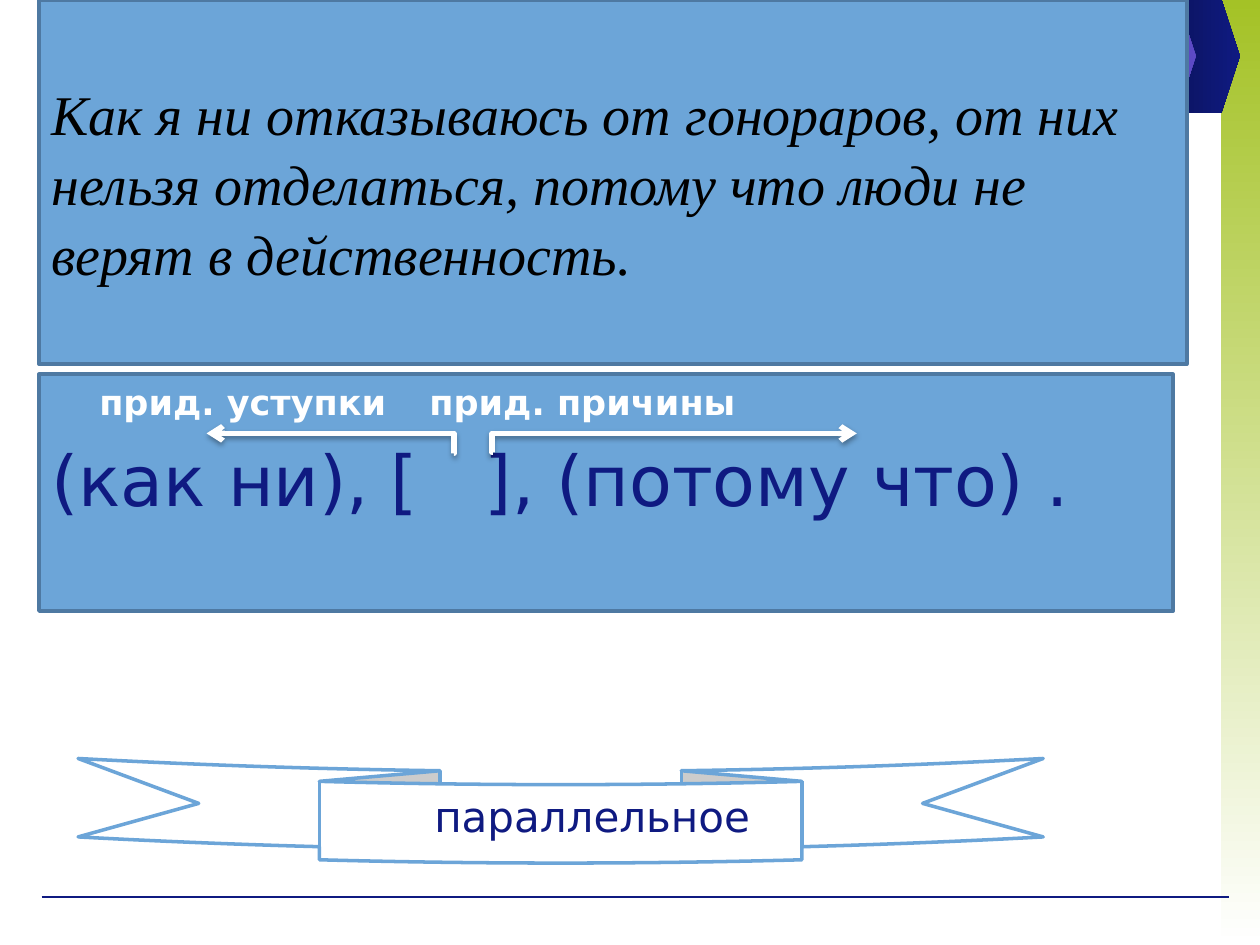
import pptx
import pptx.dml.color
import pptx.enum.shapes
import pptx.enum.text
import pptx.oxml
import pptx.oxml.ns
import pptx.util
from pptx.util import Inches

SHAPES = pptx.enum.shapes.MSO_SHAPE
CONNECTORS = pptx.enum.shapes.MSO_CONNECTOR
ALIGN = pptx.enum.text.PP_ALIGN
ANCHOR = pptx.enum.text.MSO_ANCHOR

NAVY, BLUE, EDGE, WHITE, BLACK = "0F1A81", "6CA5D8", "4E79A2", "FFFFFF", "000000"
SANS, SERIF = "DejaVu Sans", "Times New Roman"
DRAWING = pptx.oxml.ns.nsdecls("a")
SHADOW = (
    f'<a:effectLst {DRAWING}><a:outerShdw blurRad="39370" dist="22860" dir="5400000" '
    'rotWithShape="0"><a:srgbClr val="000000"><a:alpha val="35000"/></a:srgbClr>'
    "</a:outerShdw></a:effectLst>"
)


def color(value):
    return pptx.dml.color.RGBColor.from_string(value)


class SlideBuilder:
    def __init__(self, slide):
        self.slide = slide

    def shape(self, kind, left, top, width, height, fill, line=None, adjustment=None):
        """Add a preset shape; a pair of colours as fill makes a gradient."""
        shape = self.slide.shapes.add_shape(
            kind, Inches(left), Inches(top), Inches(width), Inches(height))
        shape.shadow.inherit = False
        if adjustment is not None:
            shape.adjustments[0] = adjustment
        if isinstance(fill, tuple):
            shape.fill.gradient()
            for stop, value in zip(shape.fill.gradient_stops, fill):
                stop.color.rgb = color(value)
        else:
            shape.fill.solid()
            shape.fill.fore_color.rgb = color(fill)
        if line:
            shape.line.color.rgb = color(line)
            shape.line.width = pptx.util.Pt(2)
        else:
            shape.line.fill.background()
        shape.text_frame.word_wrap = True
        return shape

    def paragraph(self, shape, runs, size, value, font=SANS, bold=False, italic=False,
                  align=ALIGN.LEFT, before=0, first=True):
        frame = shape.text_frame
        paragraph = frame.paragraphs[0] if first else frame.add_paragraph()
        paragraph.alignment = align
        paragraph.space_before = pptx.util.Pt(before)
        for text in runs:
            run = paragraph.add_run()
            run.text = text
            run.font.name = font
            run.font.size = pptx.util.Pt(size)
            run.font.bold = bold
            run.font.italic = italic
            run.font.color.rgb = color(value)
        return paragraph

    def connector(self, kind, start, end, value, width, effect=f"<a:effectLst {DRAWING}/>"):
        connector = self.slide.shapes.add_connector(
            kind, *(Inches(length) for length in (*start, *end)))
        connector.line.color.rgb = color(value)
        connector.line.width = pptx.util.Pt(width)
        connector._element.spPr.append(pptx.oxml.parse_xml(effect))
        return connector

    def bent_arrow(self, start, end):
        """Add an elbow arrow that turns at its very start."""
        arrow = self.connector(CONNECTORS.ELBOW, start, end, WHITE, 3, SHADOW)
        guides = arrow._element.spPr.find(".//" + pptx.oxml.ns.qn("a:avLst"))
        guides.append(pptx.oxml.parse_xml(
            f'<a:gd {DRAWING} name="adj1" fmla="val -150"/>'))
        arrow.line._get_or_add_ln().append(pptx.oxml.parse_xml(
            f'<a:tailEnd {DRAWING} type="arrow"/>'))


def main():
    presentation = pptx.Presentation()
    presentation.slide_width = Inches(10)
    presentation.slide_height = Inches(7.5)
    builder = SlideBuilder(presentation.slides.add_slide(presentation.slide_layouts[6]))

    # Decoration on the right and the bottom rule
    side_bar = builder.shape(SHAPES.RECTANGLE, 9.69, 0, 0.31, 7.5, ("A4C226", WHITE))
    side_bar.fill.gradient_angle = 270
    for left, fill in ((9.25, ("0B135C", NAVY)), (8.9, ("43368E", "5D4BC7"))):
        pentagon = builder.shape(SHAPES.PENTAGON, left, -0.01, 0.59, 0.91, fill,
                                 adjustment=0.25)
        pentagon.fill.gradient_angle = 0
    builder.connector(CONNECTORS.STRAIGHT, (0.33, 7.12), (9.75, 7.12), NAVY, 0.75)

    # Example sentence
    sentence = builder.shape(SHAPES.RECTANGLE, 0.31, 0, 9.11, 2.89, BLUE, EDGE)
    sentence.text_frame.vertical_anchor = ANCHOR.MIDDLE
    paragraph = builder.paragraph(
        sentence,
        ["Как я ни отказываюсь от гонораров, от них нельзя отделаться, "
         "потому что люди не верят в действенность."],
        32, BLACK, SERIF, italic=True)
    paragraph.line_spacing = 1.04

    # Sentence scheme: clause labels, set apart by a tab stop, above the formula
    scheme = builder.shape(SHAPES.RECTANGLE, 0.31, 2.97, 9, 1.88, BLUE, EDGE)
    scheme.text_frame.vertical_anchor = ANCHOR.TOP
    labels = builder.paragraph(scheme, ["прид. уступки", "\t", "прид. причины"],
                               20, WHITE, bold=True, before=4)
    properties = labels._p.get_or_add_pPr()
    properties.set("indent", str(Inches(0.38)))
    properties.append(pptx.oxml.parse_xml(
        f'<a:tabLst {DRAWING}><a:tab pos="{Inches(5.37)}" algn="l"/></a:tabLst>'))
    builder.paragraph(scheme, ["(как ни), [   ], (потому что) ."], 40, NAVY,
                      before=8, first=False)

    # Ribbon naming the kind of subordination
    ribbon = builder.shape(SHAPES.CURVED_DOWN_RIBBON, 0.62, 6.02, 7.66, 0.83, WHITE, BLUE)
    ribbon.text_frame.vertical_anchor = ANCHOR.TOP
    name = builder.paragraph(ribbon, ["параллельное"], 24, NAVY, align=ALIGN.CENTER)
    name._p.get_or_add_pPr().set("marL", str(Inches(0.5)))

    # Arrows from the main clause to both subordinate clauses
    builder.bent_arrow((3.91, 3.59), (6.8, 3.44))
    builder.bent_arrow((3.6, 3.6), (1.64, 3.44))

    presentation.save("out.pptx")


if __name__ == "__main__":
    main()
